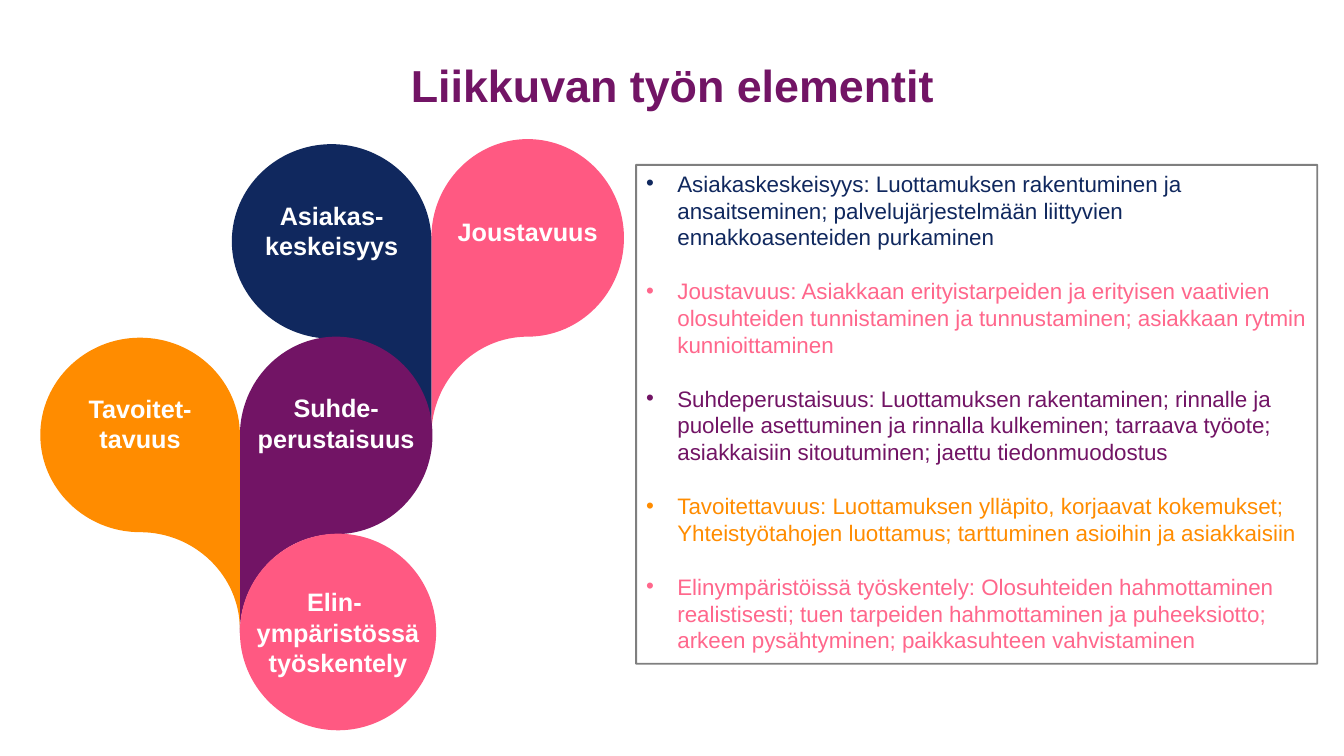
"""Build the slide on the elements of mobile work."""
import pptx
import pptx.dml.color
import pptx.enum.shapes
import pptx.enum.text
import pptx.util
from lxml import etree

RGBColor = pptx.dml.color.RGBColor
PURPLE = RGBColor(0x72, 0x14, 0x65)
NAVY = RGBColor(0x10, 0x28, 0x5E)
PINK = RGBColor(0xFF, 0x59, 0x82)
LIGHT_PINK = RGBColor(0xFF, 0x67, 0x8C)
ORANGE = RGBColor(0xFF, 0x8C, 0x00)
WHITE = RGBColor(0xFF, 0xFF, 0xFF)
BLACK = RGBColor(0x00, 0x00, 0x00)

FONT = "Arial"
WIDTH = pptx.util.Inches(13.33)
HEIGHT = pptx.util.Inches(7.5)
TAIL_LEFT, TAIL_RIGHT = -1, 1
ROUNDING = 0.55
DRAWING = "{http://schemas.openxmlformats.org/drawingml/2006/main}"
ALIGN = pptx.enum.text.PP_ALIGN
ANCHOR = pptx.enum.text.MSO_ANCHOR
SHAPES = pptx.enum.shapes.MSO_SHAPE

DROPS = [
    ("Joustavuus", PINK, (32.1, 18.4, 14.33, 26.13), TAIL_LEFT, 10.2),
    ("Asiakas-keskeisyys", NAVY, (17.25, 19.07, 14.85, 25.73), TAIL_RIGHT, 7.4),
    ("Suhde- perustaisuus", PURPLE, (17.85, 44.53, 14.33, 26.13), TAIL_LEFT, 7.4),
]
FRONT_DROP = ("Tavoitet-tavuus", ORANGE, (3, 44.67, 14.85, 25.73), TAIL_RIGHT, 7.33)

DESCRIPTIONS = [
    ("Asiakaskeskeisyys: Luottamuksen rakentuminen ja ansaitseminen; "
     "palvelujärjestelmään liittyvien ennakkoasenteiden purkaminen", NAVY),
    ("Joustavuus: Asiakkaan erityistarpeiden ja erityisen vaativien "
     "olosuhteiden tunnistaminen ja tunnustaminen; asiakkaan rytmin "
     "kunnioittaminen", LIGHT_PINK),
    ("Suhdeperustaisuus: Luottamuksen rakentaminen; rinnalle ja puolelle "
     "asettuminen ja rinnalla kulkeminen; tarraava työote; asiakkaisiin "
     "sitoutuminen; jaettu tiedonmuodostus", PURPLE),
    ("Tavoitettavuus: Luottamuksen ylläpito, korjaavat kokemukset; "
     "Yhteistyötahojen luottamus; tarttuminen asioihin ja asiakkaisiin", ORANGE),
    ("Elinympäristöissä työskentely: Olosuhteiden hahmottaminen "
     "realistisesti; tuen tarpeiden hahmottaminen ja puheeksiotto; arkeen "
     "pysähtyminen; paikkasuhteen vahvistaminen", LIGHT_PINK),
]


def across(percent):
    """Return a share of the slide's width."""
    return round(WIDTH * percent / 100)


def down(percent):
    """Return a share of the slide's height."""
    return round(HEIGHT * percent / 100)


def area(left, top, width, height):
    """Turn percentages into a position and a size."""
    return across(left), down(top), across(width), down(height)


def style_font(font, size, color, bold=False):
    """Set the look of a font."""
    font.name = FONT
    font.size = pptx.util.Pt(size)
    font.bold = bold
    font.color.rgb = color


def paint(shape, color):
    """Give a shape a plain fill without line or shadow."""
    shape.shadow.inherit = False
    shape.fill.solid()
    shape.fill.fore_color.rgb = color
    shape.line.fill.background()


def clear_margins(frame):
    """Remove the space round a text."""
    frame.margin_left = frame.margin_right = 0
    frame.margin_top = frame.margin_bottom = 0


def add_label(shape, text, anchor):
    """Write a centred white label into a shape."""
    frame = shape.text_frame
    frame.text = text
    frame.vertical_anchor = anchor
    para = frame.paragraphs[0]
    para.alignment = ALIGN.CENTER
    for span in para.runs:
        style_font(span.font, 18, WHITE, bold=True)


def drop_points(left, top, width, height, side):
    """Return the start of a drop and the points of its five curves."""
    k = ROUNDING
    units = [(1, 0),
             (1, -k), (k, -1), (0, -1),
             (-k, -1), (-1, -k), (-1, 0),
             (-1, k), (-k, 1), (0, 1),
             (k, 1), (1, 2 - k), (1, 2)]
    return [(round(left + width / 2 * (1 + side * x)),
             round(top + height / 2 * (1 + y))) for x, y in units]


def bend_segments(shape):
    """Join every three straight segments into one curve."""
    segments = list(shape._element.iter(DRAWING + "lnTo"))
    for start in range(0, len(segments), 3):
        curve = etree.Element(DRAWING + "cubicBezTo")
        segments[start].addprevious(curve)
        for segment in segments[start:start + 3]:
            curve.append(segment[0])
            segment.getparent().remove(segment)


def add_drop(page, text, color, bounds, side, inset):
    """Draw a labelled drop with its tail on one side."""
    first, *rest = drop_points(*area(*bounds), side)
    builder = page.shapes.build_freeform(*first)
    builder.add_line_segments(rest, close=True)
    drop = builder.convert_to_shape()
    bend_segments(drop)
    paint(drop, color)
    drop.text_frame.word_wrap = True
    drop.text_frame.margin_top = down(inset)
    add_label(drop, text, ANCHOR.TOP)


def add_circle(page, text, color, bounds):
    """Draw a labelled circle."""
    circle = page.shapes.add_shape(SHAPES.OVAL, *area(*bounds))
    paint(circle, color)
    clear_margins(circle.text_frame)
    circle.text_frame.word_wrap = False
    add_label(circle, text, ANCHOR.MIDDLE)


def add_title(page, text, bounds):
    """Write the heading."""
    frame = page.shapes.add_textbox(*area(*bounds)).text_frame
    frame.word_wrap = True
    clear_margins(frame)
    frame.vertical_anchor = ANCHOR.MIDDLE
    frame.text = text
    para = frame.paragraphs[0]
    para.alignment = ALIGN.CENTER
    para.line_spacing = 0.9
    style_font(para.runs[0].font, 32, PURPLE, bold=True)


def add_bullet(para, indent):
    """Give a paragraph a hanging bullet."""
    properties = para._p.get_or_add_pPr()
    properties.set("marL", str(indent))
    properties.set("indent", str(-indent))
    etree.SubElement(properties, DRAWING + "buFont", typeface=FONT)
    etree.SubElement(properties, DRAWING + "buChar", char="•")


def add_frame_line(box):
    """Give a box a half transparent black line."""
    box.line.color.rgb = BLACK
    box.line.width = pptx.util.Pt(1.35)
    line = next(box._element.iter(DRAWING + "ln"))
    color = next(line.iter(DRAWING + "srgbClr"))
    etree.SubElement(color, DRAWING + "alpha", val="50000")


def add_descriptions(page, descriptions, bounds):
    """Draw the framed list of descriptions."""
    box = page.shapes.add_shape(SHAPES.RECTANGLE, *area(*bounds))
    paint(box, WHITE)
    add_frame_line(box)
    frame = box.text_frame
    frame.word_wrap = True
    frame.vertical_anchor = ANCHOR.TOP
    for index, (text, color) in enumerate(descriptions):
        para = frame.add_paragraph() if index else frame.paragraphs[0]
        para.text = text
        para.alignment = ALIGN.LEFT
        if index:
            para.space_before = pptx.util.Pt(19.2)
        add_bullet(para, across(2.33))
        style_font(para.runs[0].font, 16, color)


def main():
    """Build and save the deck."""
    deck = pptx.Presentation()
    deck.slide_width, deck.slide_height = WIDTH, HEIGHT
    page = deck.slides.add_slide(deck.slide_layouts[6])
    add_title(page, "Liikkuvan työn elementit", (4, 4.85, 92.1, 13.47))
    for drop in DROPS:
        add_drop(page, *drop)
    add_circle(page, "Elin- \vympäristössä\vtyöskentely", PINK,
               (17.85, 70.6, 14.6, 26))
    add_drop(page, *FRONT_DROP)
    add_descriptions(page, DESCRIPTIONS, (47.33, 21.8, 50.68, 66))
    deck.save("out.pptx")


if __name__ == "__main__":
    main()
